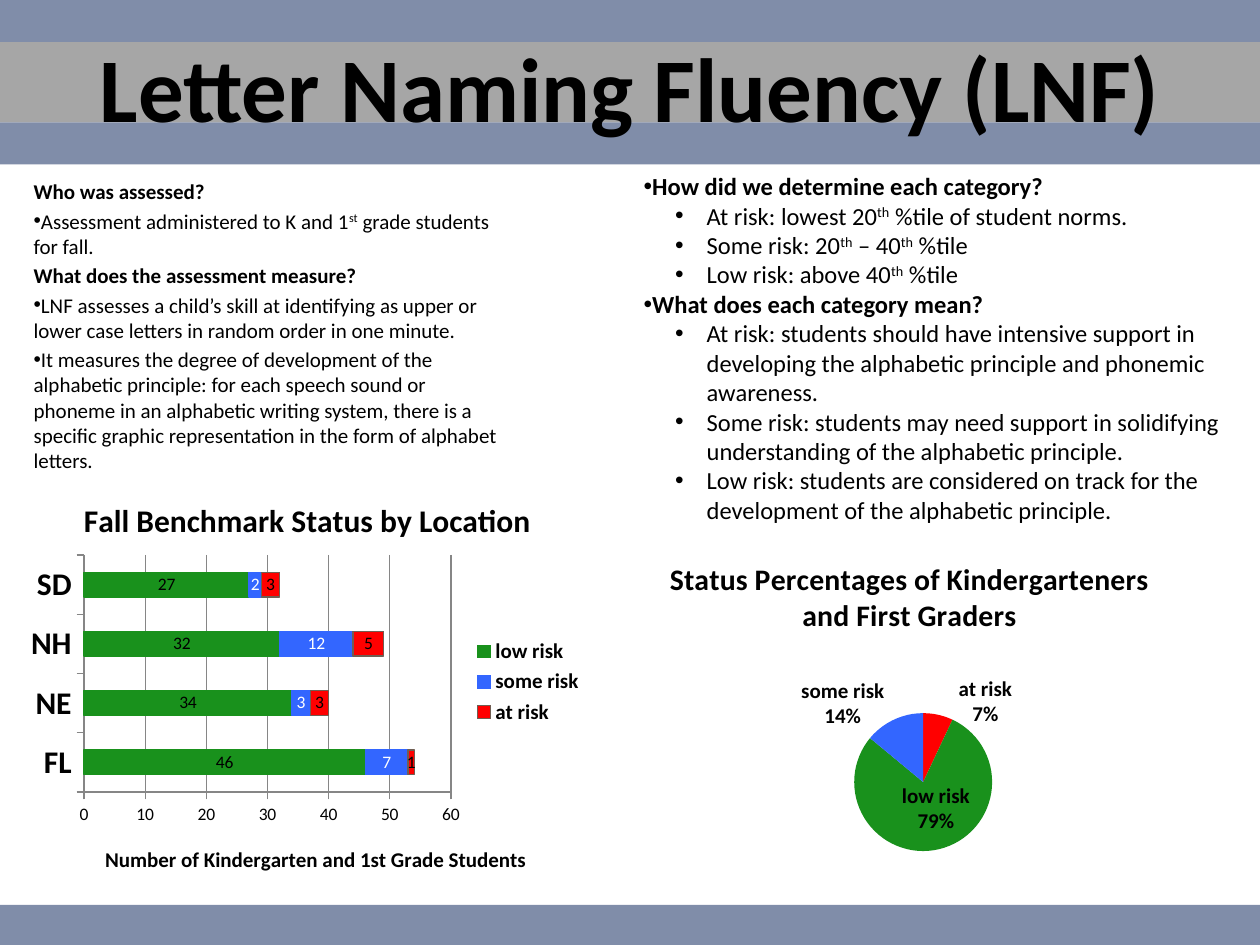
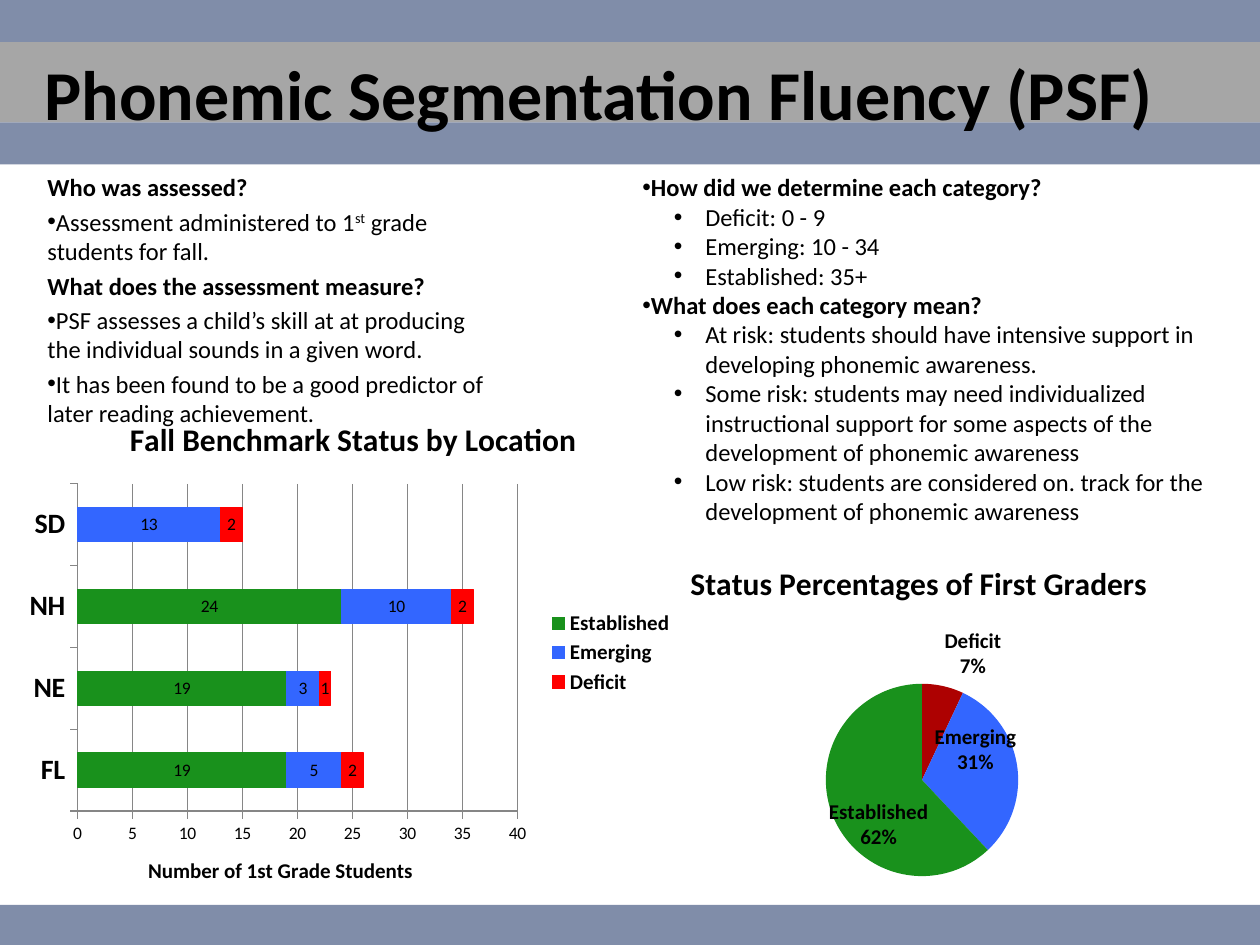
import pptx
import pptx.chart.data
import pptx.dml.color
import pptx.enum.chart
import pptx.enum.shapes
import pptx.enum.text
import pptx.oxml.ns
import pptx.util
from lxml import etree

Pt = pptx.util.Pt
qn = pptx.oxml.ns.qn
CHART = pptx.enum.chart
FONT = "Calibri"
COLORS = {
    "band": "808DA9", "title_band": "A6A6A6", "text": "000000", "white": "FFFFFF",
    "green": "19911C", "blue": "3366FF", "red": "FF0000", "dark_red": "AD0101",
    "red_edge": "705E53", "grid": "868686",
}
BANDS = [(0, 24, "band"), (24, 46, "title_band"), (70, 24, "band"), (517, 23, "band")]
# kind: (bold, bullet, left margin, first-line indent)
PARA_KINDS = {
    "plain_head": (True, False, 0, 0),
    "head": (True, True, 0, 0),
    "point": (False, True, 0, 0),
    "sub": (False, True, 36, -18),
}
LOCATIONS = ["FL", "NE", "NH", "SD"]


def color(name):
    return pptx.dml.color.RGBColor.from_string(COLORS[name])


def style_font(font, size, bold=False, tint="text"):
    font.name, font.size, font.bold = FONT, Pt(size), bold
    font.color.rgb = color(tint)


def add_bands(page, width):
    for top, height, tint in BANDS:
        band = page.shapes.add_shape(pptx.enum.shapes.MSO_SHAPE.RECTANGLE,
                                     Pt(0), Pt(top), width, Pt(height))
        band.shadow.inherit = False
        band.fill.solid()
        band.fill.fore_color.rgb = color(tint)
        band.line.fill.background()


def add_text_frame(page, box):
    frame = page.shapes.add_textbox(*map(Pt, box)).text_frame
    frame.word_wrap = True
    return frame


def add_title(page, box, text, size):
    frame = add_text_frame(page, box)
    frame.vertical_anchor = pptx.enum.text.MSO_ANCHOR.MIDDLE
    para = frame.paragraphs[0]
    para.alignment = pptx.enum.text.PP_ALIGN.CENTER
    span = para.add_run()
    span.text = text
    style_font(span.font, size, True)


def add_body(page, box, size, gap, lines):
    """Lines are (kind, text); text between carets is superscript."""
    frame = add_text_frame(page, box)
    for index, (kind, text) in enumerate(lines):
        bold, bullet, margin, indent = PARA_KINDS[kind]
        para = frame.add_paragraph() if index else frame.paragraphs[0]
        properties = para._p.get_or_add_pPr()
        properties.set("marL", str(Pt(margin)))
        properties.set("indent", str(Pt(indent)))
        if bullet:
            etree.SubElement(properties, qn("a:buFont")).set("typeface", "Arial")
            etree.SubElement(properties, qn("a:buChar")).set("char", "•")
        para.space_before = Pt(gap if index else 0)
        for part, words in enumerate(text.split("^")):
            span = para.add_run()
            span.text = words
            style_font(span.font, size, bold)
            if part % 2:
                span._r.get_or_add_rPr().set("baseline", "30000")


def set_layout(parent, x, y, w=None, h=None, inner=False, offset=False):
    """Place a chart part by fractions of the chart's size."""
    for old in parent.findall(qn("c:layout")):
        parent.remove(old)
    layout = etree.Element(qn("c:layout"))
    manual = etree.SubElement(layout, qn("c:manualLayout"))
    settings = [("layoutTarget", "inner")] if inner else []
    if not offset:
        settings += [("xMode", "edge"), ("yMode", "edge")]
    settings += [("x", x), ("y", y)]
    if w is not None:
        settings += [("w", w), ("h", h)]
    for tag, value in settings:
        etree.SubElement(manual, qn("c:" + tag)).set("val", str(value))
    before = [child for child in parent
              if child.tag in (qn("c:tx"), qn("c:legendPos"), qn("c:idx"))]
    if before:
        before[-1].addnext(layout)
    else:
        parent.insert(0, layout)


def add_chart(page, box, kind, data, title, title_size, title_at, plot_at):
    chart = page.shapes.add_chart(kind, *map(Pt, box), data).chart
    style_font(chart.font, 10)
    chart.has_title = True
    span = chart.chart_title.text_frame.paragraphs[0].add_run()
    span.text = title
    style_font(span.font, title_size, True)
    chart.chart_title.include_in_layout = False
    set_layout(chart.element.xpath("c:chart/c:title")[0], *title_at)
    set_layout(chart.element.xpath("c:chart/c:plotArea")[0], *plot_at, inner=True)
    return chart


def add_location_bars(page, box, series, axis_title, axis_max, axis_step, name_size, places):
    """Series are (name, values, fill, line, label colour)."""
    data = pptx.chart.data.CategoryChartData()
    data.categories = LOCATIONS
    for name, values, *_ in series:
        data.add_series(name, values)
    chart = add_chart(page, box, CHART.XL_CHART_TYPE.BAR_STACKED, data,
                      "Fall Benchmark Status by Location", 18, places["title"], places["plot"])
    plot = chart.plots[0]
    plot.vary_by_categories = False
    plot.gap_width, plot.overlap = 140, 100
    for bars, (_, _, fill, edge, label) in zip(plot.series, series):
        bars.format.fill.solid()
        bars.format.fill.fore_color.rgb = color(fill)
        bars.format.line.color.rgb = color(edge)
        bars.format.line.width = Pt(0.75)
        bars.data_labels.show_value = True
        style_font(bars.data_labels.font, 10, tint=label)

    names, counts = chart.category_axis, chart.value_axis
    style_font(names.tick_labels.font, name_size, True)
    style_font(counts.tick_labels.font, 10)
    counts.minimum_scale, counts.maximum_scale, counts.major_unit = 0, axis_max, axis_step
    counts.has_major_gridlines = True
    for axis in (names, counts):
        axis.major_tick_mark = CHART.XL_TICK_MARK.OUTSIDE
    for line in (names.format.line, counts.format.line, counts.major_gridlines.format.line):
        line.color.rgb = color("grid")
        line.width = Pt(0.75)
    span = counts.axis_title.text_frame.paragraphs[0].add_run()
    span.text = axis_title
    style_font(span.font, 12, True)
    set_layout(chart.element.xpath(".//c:valAx/c:title")[0], *places["axis"])

    chart.has_legend = True
    chart.legend.position = CHART.XL_LEGEND_POSITION.RIGHT
    chart.legend.include_in_layout = False
    style_font(chart.legend.font, 12, True)
    set_layout(chart.element.xpath("c:chart/c:legend")[0], *places["legend"])


def add_status_pie(page, box, title, title_size, slices, places):
    """Slices are (name, percentage, fill, label offset from outside the slice)."""
    data = pptx.chart.data.CategoryChartData()
    data.categories = [item[0] for item in slices]
    data.add_series("Series 1", [item[1] for item in slices])
    chart = add_chart(page, box, CHART.XL_CHART_TYPE.PIE, data, title, title_size,
                      places["title"], places["plot"])
    chart.has_legend = False
    chart.plots[0].vary_by_categories = True
    pie = chart.plots[0].series[0]
    style_font(pie.data_labels.font, 12, True)
    for index, (_, _, fill, _) in enumerate(slices):
        point = pie.points[index]
        point.format.fill.solid()
        point.format.fill.fore_color.rgb = color(fill)
        point.format.line.fill.background()
        style_font(point.data_label.font, 12, True)
        point.data_label.position = CHART.XL_LABEL_POSITION.OUTSIDE_END
    for label, item in zip(chart.element.xpath(".//c:dLbl"), slices):
        set_layout(label, *item[3], offset=True)
    for labels in chart.element.xpath(".//c:dLbls | .//c:dLbl"):
        for tag, value in (("showVal", "0"), ("showCatName", "1"), ("showPercent", "1")):
            labels.find(qn("c:" + tag)).set("val", value)
        separator = etree.Element(qn("c:separator"))
        separator.text = "\n"
        labels.find(qn("c:showBubbleSize")).addnext(separator)
    for leader in chart.element.xpath(".//c:showLeaderLines"):
        leader.set("val", "0")
    for body in chart.element.xpath(".//c:dLbls//a:bodyPr"):
        body.set("wrap", "none")


def build_letter_naming(page):
    add_body(page, (12.2, 98.6, 287.5, 169), 12, 2.4, [
        ("plain_head", "Who was assessed?"),
        ("point", "Assessment administered to K and 1^st^ grade students for fall."),
        ("plain_head", "What does the assessment measure?"),
        ("point", "LNF assesses a child’s skill at identifying as upper or lower case letters "
                  "in random order in one minute."),
        ("point", "It measures the degree of development of the alphabetic principle: for each "
                  "speech sound or phoneme in an alphabetic writing system, there is a specific "
                  "graphic representation in the form of alphabet letters."),
    ])
    add_status_pie(
        page, (340, 309, 360.7, 219),
        "Status Percentages of Kindergarteners and First Graders", 17,
        [("at risk", 7, "red", (0.03, 0.05)),
         ("low risk", 79, "green", (-0.06, -0.19)),
         ("some risk", 14, "blue", (-0.01, 0.04))],
        {"title": (0.11, 0.03), "plot": (0.41, 0.45, 0.22, 0.36)})
    add_location_bars(
        page, (12, 272, 327.6, 237.6),
        [("low risk", (46, 34, 32, 27), "green", "green", "text"),
         ("some risk", (7, 3, 12, 2), "blue", "blue", "white"),
         ("at risk", (1, 3, 5, 3), "red", "red_edge", "text")],
        "Number of Kindergarten and 1st Grade Students", 60, 10, 18,
        {"title": (0.1, 0.04), "plot": (0.11, 0.19, 0.64, 0.57),
         "axis": (0.14, 0.88), "legend": (0.78, 0.38, 0.21, 0.23)})
    add_body(page, (360.7, 94.3, 346.3, 227.5), 14, 0, [
        ("head", "How did we determine each category?"),
        ("sub", "At risk: lowest 20^th^ %tile of student norms."),
        ("sub", "Some risk: 20^th^ – 40^th^ %tile"),
        ("sub", "Low risk: above 40^th^ %tile"),
        ("head", "What does each category mean?"),
        ("sub", "At risk: students should have intensive support in developing the alphabetic "
                "principle and phonemic awareness."),
        ("sub", "Some risk: students may need support in solidifying understanding of the "
                "alphabetic principle."),
        ("sub", "Low risk: students are considered on track for the development of the "
                "alphabetic principle."),
    ])
    add_title(page, (36, 23, 648, 52), "Letter Naming Fluency (LNF)", 52)


def build_phonemic_segmentation(page):
    add_body(page, (20, 95, 275, 145.4), 14, 2.8, [
        ("plain_head", "Who was assessed?"),
        ("point", "Assessment administered to 1^st^ grade students for fall."),
        ("plain_head", "What does the assessment measure?"),
        ("point", "PSF assesses a child’s skill at at producing the individual sounds in a "
                  "given word."),
        ("point", "It has been found to be a good predictor of later reading achievement."),
    ])
    add_location_bars(
        page, (10, 226.8, 381, 292.3),
        [("Established", (19, 19, 24, None), "green", "green", "text"),
         ("Emerging", (5, 3, 10, 13), "blue", "blue", "text"),
         ("Deficit", (2, 1, 2, 2), "red", "red", "text")],
        "Number of 1st Grade Students", 40, 5, 16,
        {"title": (0.16, 0.03), "plot": (0.09, 0.17, 0.66, 0.64),
         "axis": (0.19, 0.89), "legend": (0.79, 0.41, 0.2, 0.18)})
    add_status_pie(
        page, (340, 309, 366.5, 208.8), "Status Percentages of First Graders", 18,
        [("Deficit", 7, "dark_red", (0, 0)),
         ("Emerging", 31, "blue", (-0.14, 0.03)),
         ("Established", 62, "green", (0.16, -0.05))],
        {"title": (0.14, 0.04), "plot": (0.36, 0.39, 0.3, 0.53)})
    add_body(page, (360, 95, 346.3, 211), 14, 0, [
        ("head", "How did we determine each category?"),
        ("sub", "Deficit: 0 - 9"),
        ("sub", "Emerging: 10 - 34"),
        ("sub", "Established: 35+"),
        ("head", "What does each category mean?"),
        ("sub", "At risk: students should have intensive support in developing phonemic "
                "awareness."),
        ("sub", "Some risk: students may need individualized instructional support for some "
                "aspects of the development of phonemic awareness"),
        ("sub", "Low risk: students are considered on. track for the development of phonemic "
                "awareness"),
    ])
    add_title(page, (0, 27, 684, 52), "Phonemic Segmentation Fluency (PSF)", 40)


def main():
    deck = pptx.Presentation()
    deck.slide_width, deck.slide_height = Pt(720), Pt(540)
    for build in (build_letter_naming, build_phonemic_segmentation):
        page = deck.slides.add_slide(deck.slide_layouts[6])
        add_bands(page, deck.slide_width)
        build(page)
    deck.save("out.pptx")


if __name__ == "__main__":
    main()
